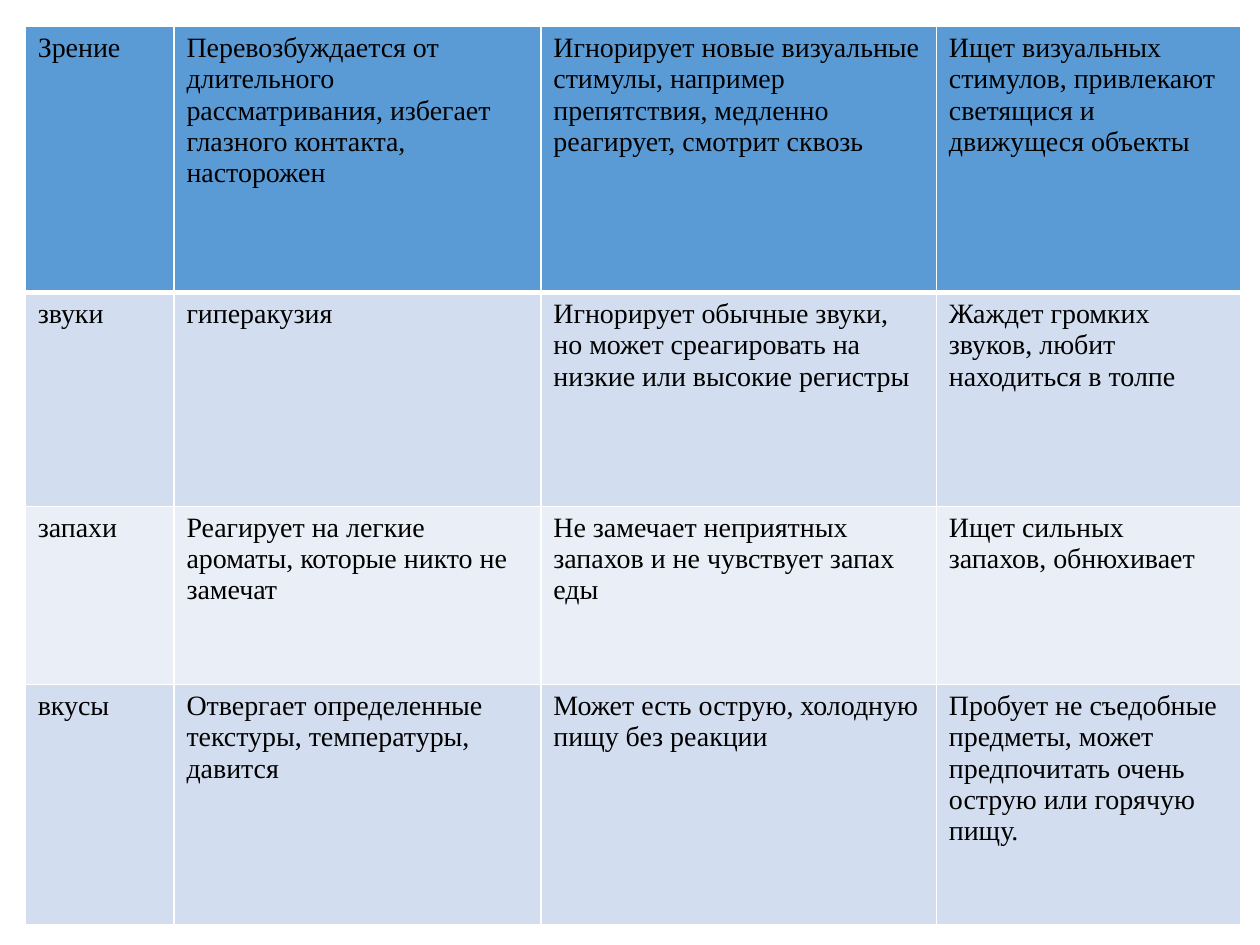
"""Build a slide with a table of sensory responses."""
from lxml.etree import SubElement
from pptx import Presentation
from pptx.dml.color import RGBColor
from pptx.oxml.ns import qn
from pptx.util import Pt

COLORS = {
    "header": "5B9BD5",
    "dark band": "D2DEEF",
    "light band": "EAEFF7",
    "border": "FFFFFF",
    "text": "000000",
}
COLUMN_WIDTHS = [85, 209.7, 226, 173.7]
ROW_HEIGHTS = [152, 122.2, 101.8, 137.2]
ROW_FILLS = ["header", "dark band", "light band", "dark band"]
ROWS = [
    [
        "Зрение",
        "Перевозбуждается от длительного рассматривания, избегает глазного контакта, насторожен",
        "Игнорирует новые визуальные стимулы, например препятствия, медленно реагирует, смотрит сквозь",
        "Ищет визуальных стимулов, привлекают светящися и движущеся объекты",
    ],
    [
        "звуки",
        "гиперакузия",
        "Игнорирует обычные звуки, но может среагировать на низкие или высокие регистры",
        "Жаждет громких звуков, любит находиться в толпе",
    ],
    [
        "запахи",
        "Реагирует на легкие ароматы, которые никто не замечат",
        "Не замечает неприятных запахов и не чувствует запах еды",
        "Ищет сильных запахов, обнюхивает",
    ],
    [
        "вкусы",
        "Отвергает определенные текстуры, температуры, давится",
        "Может есть острую, холодную пищу без реакции",
        "Пробует не съедобные предметы, может предпочитать очень острую или горячую пищу.",
    ],
]


def add_border(cell, side, width):
    properties = cell._tc.get_or_add_tcPr()
    line = SubElement(properties, qn(f"a:{side}"), w=str(Pt(width)))
    fill = SubElement(line, qn("a:solidFill"))
    SubElement(fill, qn("a:srgbClr"), val=COLORS["border"])


presentation = Presentation()
presentation.slide_width = Pt(720)
presentation.slide_height = Pt(540)
slide = presentation.slides.add_slide(presentation.slide_layouts[6])

table = slide.shapes.add_table(
    len(ROWS), len(COLUMN_WIDTHS), Pt(14.4), Pt(15.2),
    Pt(sum(COLUMN_WIDTHS)), Pt(sum(ROW_HEIGHTS)),
).table
for column, width in zip(table.columns, COLUMN_WIDTHS):
    column.width = Pt(width)
for row, height in zip(table.rows, ROW_HEIGHTS):
    row.height = Pt(height)

for row_index, texts in enumerate(ROWS):
    top_width = 3 if row_index == 1 else 1
    bottom_width = 3 if row_index == 0 else 1
    for column_index, text in enumerate(texts):
        cell = table.cell(row_index, column_index)
        add_border(cell, "lnL", 1)
        add_border(cell, "lnR", 1)
        add_border(cell, "lnT", top_width)
        add_border(cell, "lnB", bottom_width)
        cell.fill.solid()
        cell.fill.fore_color.rgb = RGBColor.from_string(COLORS[ROW_FILLS[row_index]])
        run = cell.text_frame.paragraphs[0].add_run()
        run.text = text
        run.font.name = "Times New Roman"
        run.font.size = Pt(16)
        run.font.bold = False
        run.font.color.rgb = RGBColor.from_string(COLORS["text"])

presentation.save("out.pptx")
